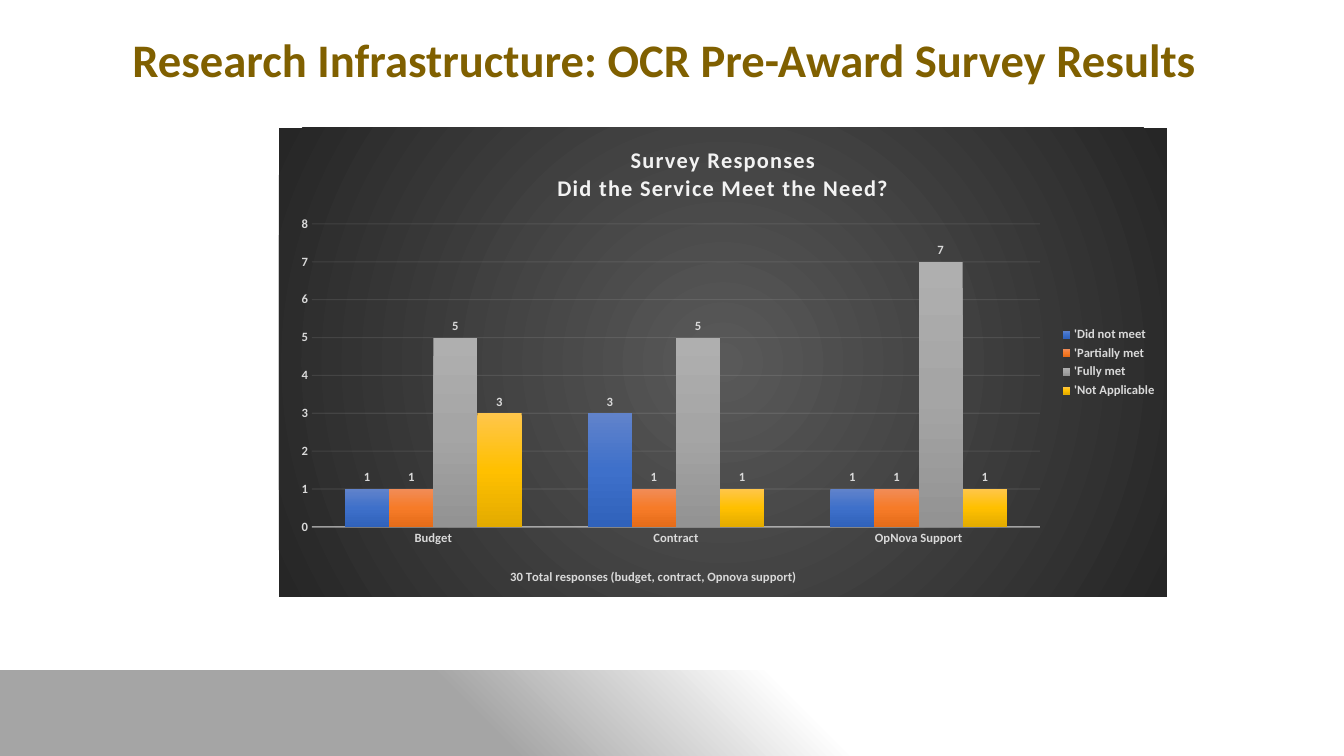
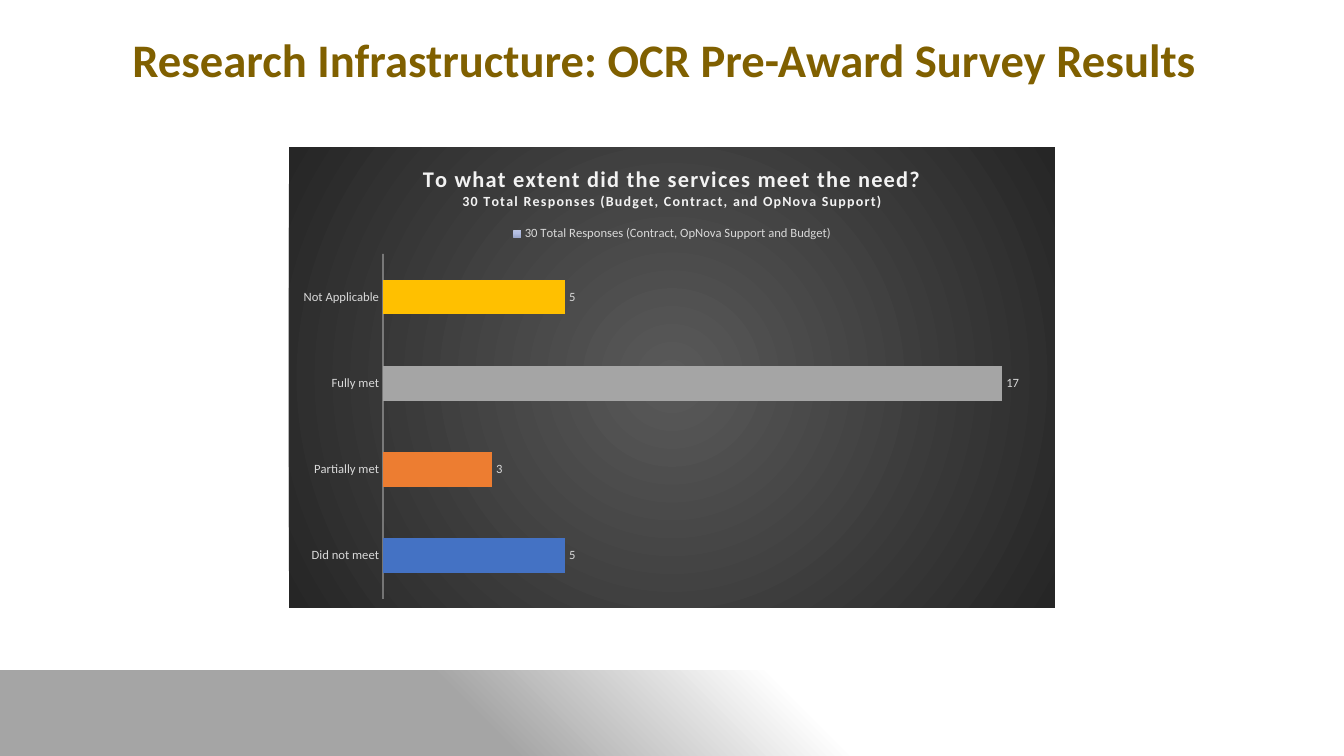
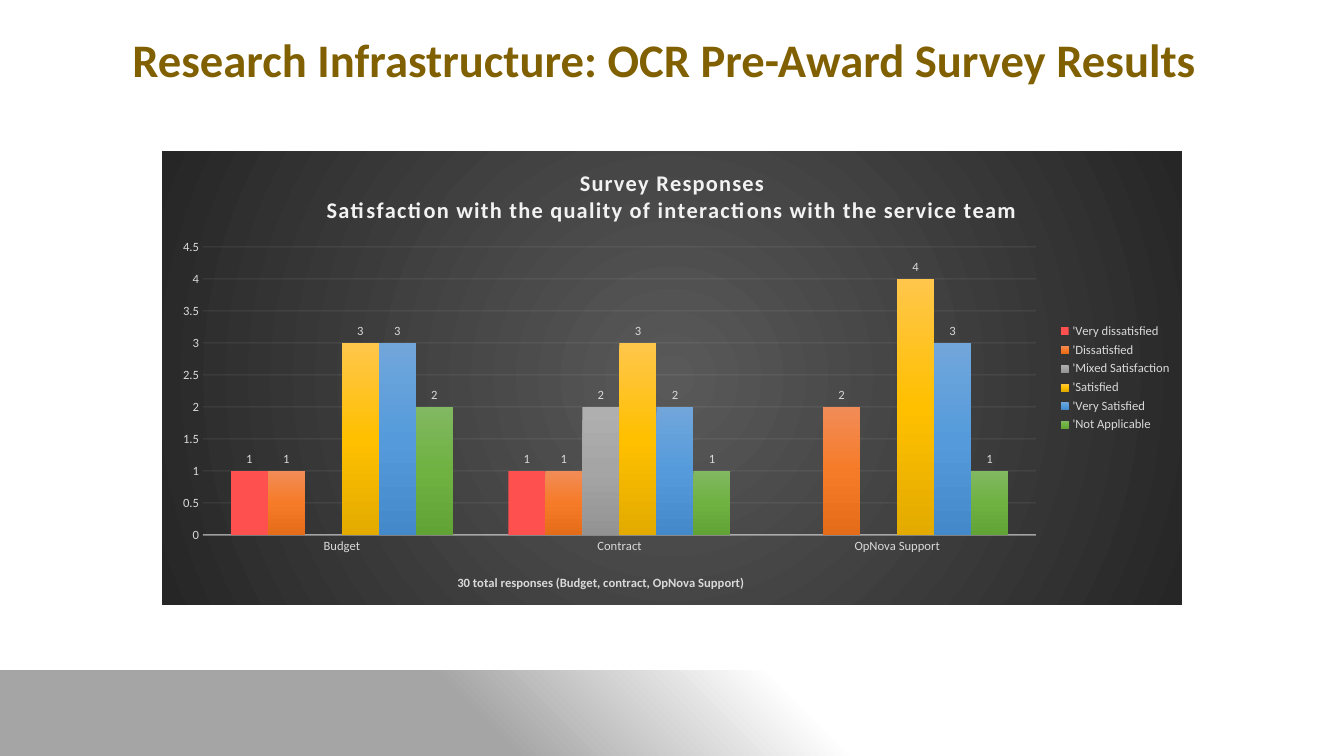
"""Build three slides of pre-award survey charts."""
from pptx import Presentation, util as u
from pptx.chart.data import CategoryChartData
from pptx.dml.color import RGBColor
from pptx.enum import chart as ch, shapes, text
from pptx.oxml.ns import qn
from pptx.oxml.xmlchemy import OxmlElement

PX = 9071
WIDE, HIGH = 1344, 756
FONT = "Calibri"
HEAD = "Research Infrastructure: OCR Pre-Award Survey Results"
HUE = {"gold": "806000", "label": "D9D9D9", "pale": "F2F2F2"}
BAND = [(0, "A5A5A5"), (36, "A5A5A5"), (60, "FFFFFF"), (100, "FFFFFF")]
BACK = [(0, "595959"), (100, "262626")]
FADE = {
    "blue": ["6183CB", "3E70CA", "3062BB"],
    "orange": ["F18C57", "F67B28", "E56C19"],
    "gray": ["AFAFAF", "A5A5A5", "939393"],
    "yellow": ["FFC64B", "FFC000", "E3AB00"],
    "sky": ["71A6DB", "559BDB", "448ACA"],
    "green": ["81B861", "6FB242", "62A336"],
    "mauve": ["BEC7E4", "B2BDE1", "9BA7CB"],
    "red": ["FF5050"] * 3,
}
COLUMN, BAR = ch.XL_CHART_TYPE.COLUMN_CLUSTERED, ch.XL_CHART_TYPE.BAR_CLUSTERED
RIGHT, TOP = ch.XL_LEGEND_POSITION.RIGHT, ch.XL_LEGEND_POSITION.TOP
AREAS = ["Budget", "Contract", "OpNova Support"]

CHARTS = [
    {"kind": COLUMN, "box": (279, 128, 888, 469), "plot": (312, 224, 728, 303),
     "title": "Survey Responses\nDid the Service Meet the Need?", "sizes": (16, 16),
     "foot": "30 Total responses (budget, contract, Opnova support)", "spot": (508, 566),
     "cats": AREAS, "top": 8, "step": 1, "bold": True, "key": RIGHT, "lap": 0,
     "rows": [("'Did not meet", "blue", (1, 3, 1)),
              ("'Partially met", "orange", (1, 1, 1)),
              ("'Fully met", "gray", (5, 5, 7)),
              ("'Not Applicable", "yellow", (3, 1, 1))]},
    {"kind": BAR, "box": (289, 147, 766, 461), "plot": (383, 254, 656, 345),
     "title": "To what extent did the services meet the need?\n"
              "30 Total Responses (Budget, Contract, and OpNova Support)", "sizes": (16, 10),
     "cats": ["Did not meet", "Partially met", "Fully met", "Not Applicable"],
     "top": 18, "step": 2, "bold": False, "key": TOP, "lap": -25,
     "points": ["4472C4", "ED7D31", "A5A5A5", "FFC000"],
     "rows": [("30 Total Responses (Contract, OpNova Support and Budget)", "mauve",
               (5, 3, 17, 5))]},
    {"kind": COLUMN, "box": (162, 151, 1020, 454), "plot": (203, 247, 833, 288),
     "title": "Survey Responses\n"
              "Satisfaction with the quality of interactions with the service team",
     "sizes": (16, 16),
     "foot": "30 total responses (Budget, contract, OpNova Support)", "spot": (455, 572),
     "cats": AREAS, "top": 4.5, "step": 0.5, "bold": False, "key": RIGHT, "lap": 0,
     "rows": [("'Very dissatisfied", "red", (1, 1, None)),
              ("'Dissatisfied", "orange", (1, 1, 2)),
              ("'Mixed Satisfaction", "gray", (None, 2, None)),
              ("'Satisfied", "yellow", (3, 3, 4)),
              ("'Very Satisfied", "sky", (3, 2, 3)),
              ("'Not Applicable", "green", (2, 1, 1))]},
]


def blend(props, stops, focus=None):
    """Append a gradient fill: round when a focus is given, else top to bottom."""
    fill = OxmlElement("a:gradFill")
    fill.set("rotWithShape", "1")
    marks = OxmlElement("a:gsLst")
    for place, tone in stops:
        mark, color = OxmlElement("a:gs"), OxmlElement("a:srgbClr")
        mark.set("pos", str(place * 1000))
        color.set("val", tone)
        mark.append(color)
        marks.append(mark)
    fill.append(marks)
    if focus:
        way, rect = OxmlElement("a:path"), OxmlElement("a:fillToRect")
        way.set("path", "circle")
        for side, part in zip("ltrb", focus):
            rect.set(side, str(part * 1000))
        way.append(rect)
    else:
        way = OxmlElement("a:lin")
        way.set("ang", "5400000")
        way.set("scaled", "0")
    fill.append(way)
    props.append(fill)


def settle(host, index, frame, spot):
    """Fix the place of a chart part, given in px on the slide."""
    for old in host.findall(qn("c:layout")):
        host.remove(old)
    outer, inner = OxmlElement("c:layout"), OxmlElement("c:manualLayout")
    left, top, wide, high = frame
    pairs = [("xMode", "edge"), ("yMode", "edge"),
             ("x", (spot[0] - left) / wide), ("y", (spot[1] - top) / high)]
    if len(spot) == 4:
        pairs = [("layoutTarget", "inner")] + pairs
        pairs += [("w", spot[2] / wide), ("h", spot[3] / high)]
    for name, value in pairs:
        item = OxmlElement("c:" + name)
        item.set("val", str(value))
        inner.append(item)
    outer.append(inner)
    host.insert(index, outer)


deck = Presentation()
deck.slide_width, deck.slide_height = WIDE * PX, HIGH * PX
label = RGBColor.from_string(HUE["label"])
pale = RGBColor.from_string(HUE["pale"])

for info in CHARTS:
    slide = deck.slides.add_slide(deck.slide_layouts[6])
    band = slide.shapes.add_shape(shapes.MSO_SHAPE.RECTANGLE, 0, 671 * PX, WIDE * PX, 85 * PX)
    band.shadow.inherit = False
    band.line.fill.background()
    blend(band.element.spPr, BAND, (0, 100, 100, 0))
    props = band.element.spPr
    props.find(qn("a:prstGeom")).addnext(props.find(qn("a:gradFill")))

    head = slide.shapes.add_textbox(92 * PX, 7 * PX, 1145 * PX, 86 * PX).text_frame
    head.word_wrap = True
    head.vertical_anchor = text.MSO_ANCHOR.BOTTOM
    head.text = HEAD
    para = head.paragraphs[0]
    para.alignment = text.PP_ALIGN.CENTER
    para.line_spacing = 0.9
    para.space_after = u.Pt(6)
    font = para.runs[0].font
    font.name, font.size, font.bold = FONT, u.Pt(33.3), True
    font.color.rgb = RGBColor.from_string(HUE["gold"])

    data = CategoryChartData()
    data.categories = info["cats"]
    for name, tone, values in info["rows"]:
        data.add_series(name, values)
    box = [n * PX for n in info["box"]]
    chart = slide.shapes.add_chart(info["kind"], *box, data).chart
    back = OxmlElement("c:spPr")
    blend(back, BACK, (50, 50, 50, 50))
    chart.element.find(qn("c:chart")).addnext(back)

    title = chart.chart_title.text_frame
    title.text = info["title"]
    for para, size in zip(title.paragraphs, info["sizes"]):
        run = para.runs[0]
        run.font.name, run.font.size, run.font.bold = FONT, u.Pt(size), True
        run.font.color.rgb = pale
        run._r.get_or_add_rPr().set("spc", "100")

    chart.has_legend = True
    chart.legend.position = info["key"]
    chart.legend.include_in_layout = False
    plot = chart.plots[0]
    plot.vary_by_categories = False
    plot.gap_width, plot.overlap = 150, info["lap"]
    settle(chart.element.find(".//" + qn("c:plotArea")), 0, info["box"], info["plot"])

    cat, val = chart.category_axis, chart.value_axis
    fonts = [chart.font, chart.legend.font, cat.tick_labels.font, val.tick_labels.font]
    cat.major_tick_mark = val.major_tick_mark = ch.XL_TICK_MARK.NONE
    val.minimum_scale, val.maximum_scale, val.major_unit = 0, info["top"], info["step"]
    lines = [(cat, cat.format.line, 1, 54)]
    if "foot" in info:
        val.format.line.fill.background()
        lines.append((val, val.major_gridlines.format.line, 0.75, 10))
        foot = cat.axis_title.text_frame
        foot.text = info["foot"]
        font = foot.paragraphs[0].runs[0].font
        font.name, font.size, font.bold = FONT, u.Pt(9), True
        font.color.rgb = label
        settle(cat.axis_title._element, 1, info["box"], info["spot"])
    else:
        val.has_major_gridlines = False
        val.visible = False
    for axis, line, width, alpha in lines:
        line.width = u.Pt(width)
        line.color.rgb = pale
        clear = OxmlElement("a:alpha")
        clear.set("val", str(alpha * 1000))
        axis._element.xpath(".//a:ln//a:srgbClr")[0].append(clear)

    for row, (name, tone, values) in zip(plot.series, info["rows"]):
        row.invert_if_negative = False
        blend(row._element.get_or_add_spPr(), zip((0, 50, 100), FADE[tone]))
        for i, color in enumerate(info.get("points", [])):
            fill = row.points[i].format.fill
            fill.solid()
            fill.fore_color.rgb = RGBColor.from_string(color)
        tags = row.data_labels
        tags.show_value = True
        tags.position = ch.XL_LABEL_POSITION.OUTSIDE_END
        fonts.append(tags.font)
    for font in fonts:
        font.name, font.size, font.bold = FONT, u.Pt(9), info["bold"]
        font.color.rgb = label

deck.save("out.pptx")
